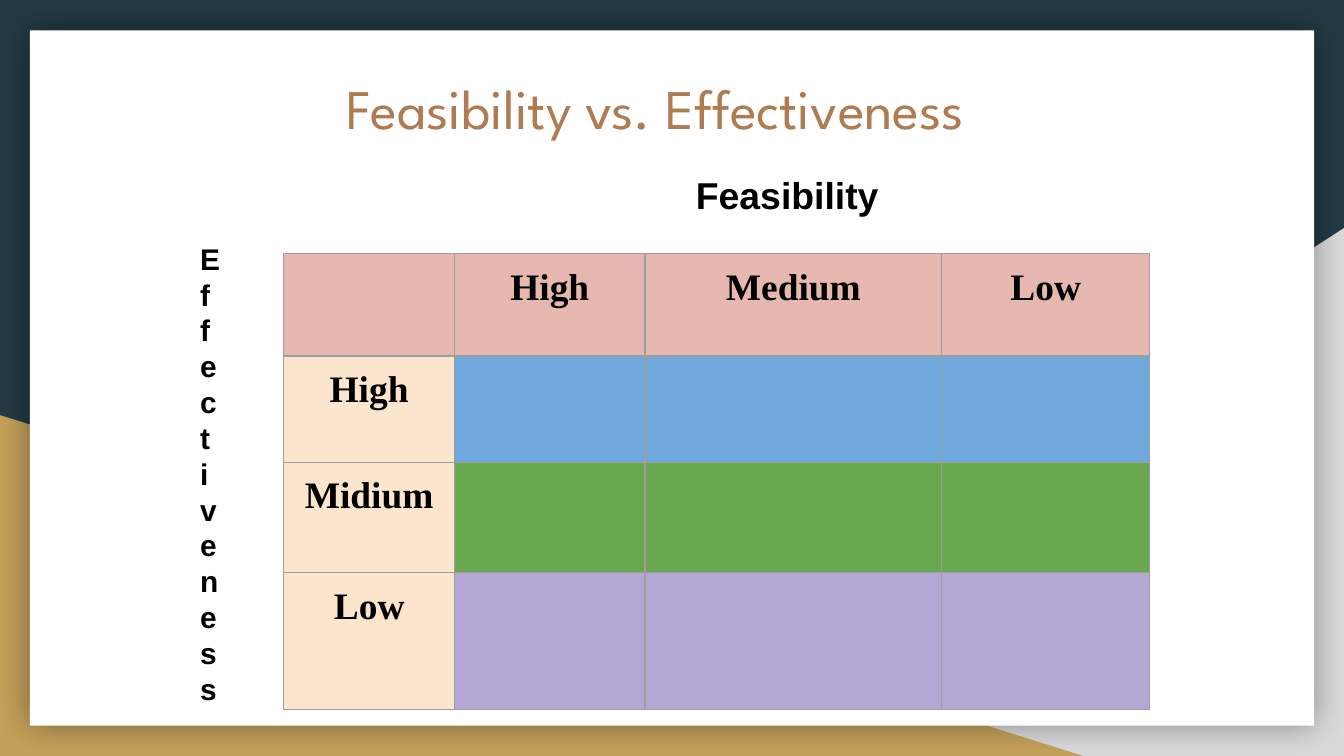
from pptx import Presentation
from pptx.dml.color import RGBColor as Color
from pptx.enum.shapes import MSO_SHAPE as Preset
from pptx.enum.text import MSO_ANCHOR as Anchor, PP_ALIGN as Align
from pptx.oxml import parse_xml
from pptx.oxml.ns import nsdecls, qn
from pptx.util import Pt

COLORS = {
    "navy": "233A44", "gray": "D9D9D9", "gold": "C4A15A", "white": "FFFFFF",
    "black": "000000", "title": "AF7B51", "border": "9E9E9E", "header": "E6B8AF",
    "label": "FCE5CD", "blue": "6FA8DC", "green": "6AA84F", "purple": "B4A7D6",
}
TITLE_FONT = {"name": "League Spartan", "size": Pt(30), "bold": False}
AXIS_FONT = {"name": "Arial", "size": Pt(20), "bold": True}
SIDE_FONT = {**AXIS_FONT, "size": Pt(16)}
CELL_FONT = {"name": "Times New Roman", "size": Pt(20), "bold": True}
COLUMN_WIDTHS = [91.6, 102, 159, 111.4]
HEADER = ["", "High", "Medium", "Low"]
ROWS = [("High", "blue", 56.9), ("Midium", "green", 59), ("Low", "purple", 73.4)]


class SlideBuilder:
    def __init__(self, slide):
        self.slide = slide
        self.shapes = slide.shapes

    def color(self, name):
        return Color.from_string(COLORS[name])

    def paint(self, target, name):
        target.fill.solid()
        target.fill.fore_color.rgb = self.color(name)

    def add_text(self, frame, text, font, color, align=Align.LEFT):
        paragraph = frame.paragraphs[0]
        paragraph.alignment = align
        run = paragraph.add_run()
        run.text = text
        for key, value in font.items():
            setattr(run.font, key, value)
        run.font.color.rgb = self.color(color)

    def block(self, preset, box, color, flip=False, shadow=False):
        shape = self.shapes.add_shape(preset, *map(Pt, box))
        self.paint(shape, color)
        shape.line.fill.background()
        shape.shadow.inherit = False
        properties = shape._element.spPr
        if flip:
            properties.find(qn("a:xfrm")).set("flipH", "1")
        if shadow:
            properties.find(qn("a:effectLst")).append(parse_xml(
                f'<a:outerShdw {nsdecls("a")} blurRad="{Pt(18)}" dist="0" algn="ctr" rotWithShape="0">'
                f'<a:srgbClr val="{COLORS["black"]}"><a:alpha val="40000"/></a:srgbClr></a:outerShdw>'))

    def title(self, text, box):
        title = self.shapes.title
        for key, value in zip(("left", "top", "width", "height"), box):
            setattr(title, key, Pt(value))
        frame = title.text_frame
        margins = dict.fromkeys(("margin_left", "margin_top", "margin_right", "margin_bottom"), Pt(7.2))
        for key, value in {**margins, "vertical_anchor": Anchor.MIDDLE, "word_wrap": True}.items():
            setattr(frame, key, value)
        self.add_text(frame, text, TITLE_FONT, "title")
        self.shapes._spTree.append(title._element)

    def label(self, text, box, font, upright=False):
        shape = self.shapes.add_textbox(*map(Pt, box))
        shape.text_frame.word_wrap = True
        if upright:
            shape.rotation = 90
            shape.text_frame._txBody.bodyPr.set("vert", "vert270")
        self.add_text(shape.text_frame, text, font, "black")

    def cell(self, cell, text, color):
        self.paint(cell, color)
        for side in ("left", "top", "right", "bottom"):
            setattr(cell, f"margin_{side}", Pt(7.2))
        if text:
            self.add_text(cell.text_frame, text, CELL_FONT, "black", Align.CENTER)
        properties = cell._tc.get_or_add_tcPr()
        for index, edge in enumerate(("lnL", "lnR", "lnT", "lnB")):
            properties.insert(index, parse_xml(
                f'<a:{edge} {nsdecls("a")} w="{Pt(0.75)}"><a:solidFill>'
                f'<a:srgbClr val="{COLORS["border"]}"/></a:solidFill></a:{edge}>'))

    def matrix(self, left, top, header_height):
        heights = [header_height] + [height for _, _, height in ROWS]
        table = self.shapes.add_table(
            len(heights), len(COLUMN_WIDTHS), Pt(left), Pt(top),
            Pt(sum(COLUMN_WIDTHS)), Pt(sum(heights))).table
        table.horz_banding = False
        for column, width in zip(table.columns, COLUMN_WIDTHS):
            column.width = Pt(width)
        for row, height in zip(table.rows, heights):
            row.height = Pt(height)
        for column, text in enumerate(HEADER):
            self.cell(table.cell(0, column), text, "header")
        for row, (text, color, _) in enumerate(ROWS, 1):
            self.cell(table.cell(row, 0), text, "label")
            for column in range(1, len(HEADER)):
                self.cell(table.cell(row, column), "", color)


def main():
    presentation = Presentation()
    presentation.slide_width, presentation.slide_height = Pt(720), Pt(405)
    slide = presentation.slides.add_slide(presentation.slide_layouts[5])
    builder = SlideBuilder(slide)
    builder.paint(slide.background, "navy")
    builder.block(Preset.RIGHT_TRIANGLE, (282.2, 122.2, 437.8, 282.8), "gray", flip=True)
    builder.block(Preset.RIGHT_TRIANGLE, (0, 222.4, 580.3, 182.6), "gold")
    builder.block(Preset.RECTANGLE, (16, 16.2, 688, 372.5), "white", shadow=True)
    builder.title("Feasibility vs. Effectiveness", (178.5, 31, 393, 52.5))
    builder.matrix(152, 136, 54.7)
    builder.label("Feasibility", (365.7, 88.5, 114.5, 31.7), AXIS_FONT)
    builder.label("Effectiveness", (-25.2, 250.6, 266.4, 15.8), SIDE_FONT, upright=True)
    presentation.save("out.pptx")


if __name__ == "__main__":
    main()
